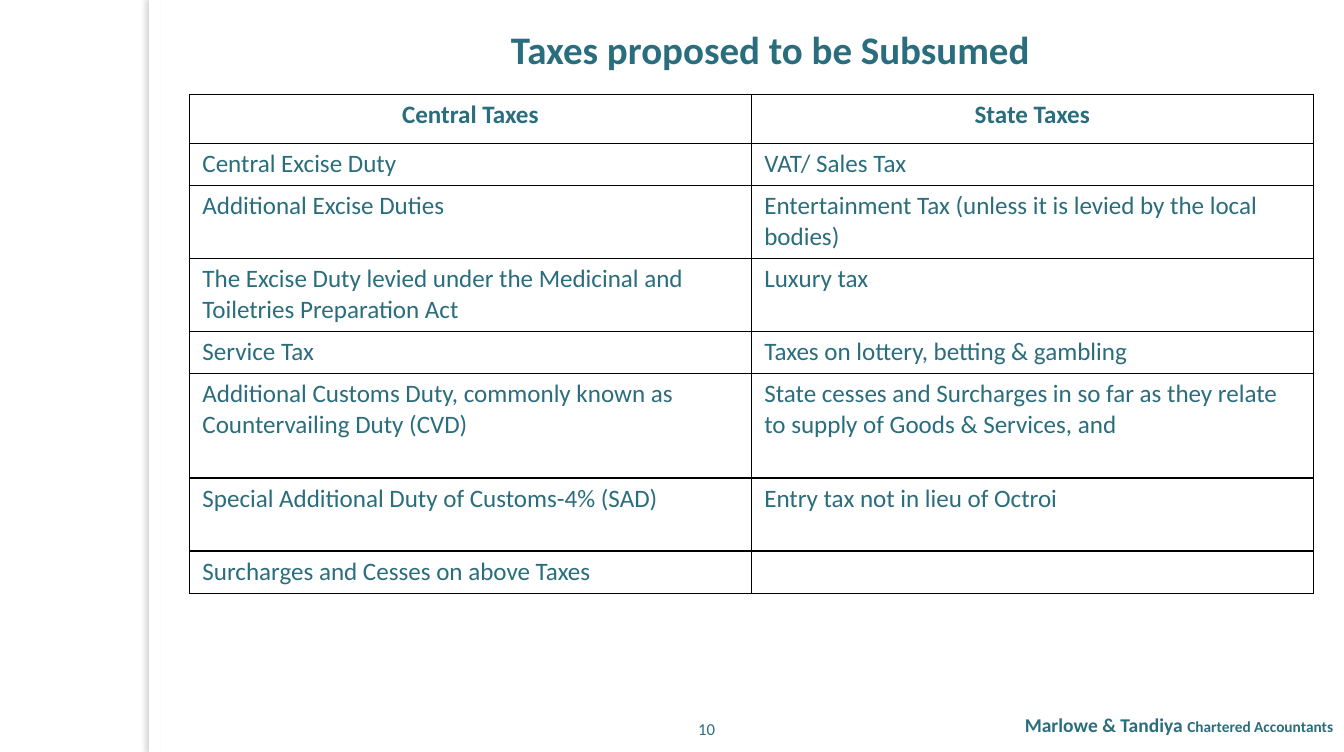
import pptx
import pptx.dml.color
import pptx.enum.shapes
import pptx.enum.text
import pptx.oxml
import pptx.oxml.ns
import pptx.util
from pptx.util import Cm

COLORS = {"teal": "2A6D7D", "white": "FFFFFF", "border": "000000", "shadow": "736F63"}
FONT = "Calibri"
ALIGN = pptx.enum.text.PP_ALIGN
NAMESPACE = pptx.oxml.ns.nsdecls("a")

TAXES = [
    ("Central Taxes", "State Taxes"),
    ("Central Excise Duty", "VAT/ Sales Tax"),
    ("Additional Excise Duties",
     "Entertainment Tax (unless it is levied by the local bodies)"),
    ("The Excise Duty levied under the Medicinal and Toiletries Preparation Act",
     "Luxury tax"),
    ("Service Tax", "Taxes on lottery, betting & gambling"),
    ("Additional Customs Duty, commonly known as Countervailing Duty (CVD)",
     "State cesses and Surcharges in so far as they relate to supply of Goods & Services, and"),
    ("Special Additional Duty of Customs-4% (SAD)", "Entry tax not in lieu of Octroi"),
    ("Surcharges and Cesses on above Taxes", ""),
]
ROW_HEIGHTS = [1.24, 1.07, 1.85, 1.85, 1.07, 2.64, 1.85, 1.07]


def color(name):
    """Return the named colour."""
    return pptx.dml.color.RGBColor.from_string(COLORS[name])


def add_span(para, text, size=18, bold=False):
    """Append formatted text to a paragraph."""
    span = para.add_run()
    span.text = text
    span.font.name = FONT
    span.font.size = pptx.util.Pt(size)
    span.font.bold = bold
    span.font.color.rgb = color("teal")


def add_text(page, spans, left, top, width, height, align=ALIGN.CENTER, margin=0):
    """Add a wrapped text box made of (text, size, bold) spans."""
    box = page.shapes.add_textbox(Cm(left), Cm(top), Cm(width), Cm(height))
    box.text_frame.word_wrap = True
    para = box.text_frame.paragraphs[0]
    para.alignment = align
    if margin:
        para._p.get_or_add_pPr().set("marL", str(Cm(margin)))
    for text, size, bold in spans:
        add_span(para, text, size=size, bold=bold)


def add_side_strip(page):
    """Add the white vertical strip that casts a shadow to the left."""
    strip = page.shapes.add_shape(
        pptx.enum.shapes.MSO_SHAPE.RECTANGLE, Cm(3.78), 0, Cm(0.28), Cm(19.05))
    strip.fill.solid()
    strip.fill.fore_color.rgb = color("white")
    strip.line.fill.background()
    strip._element.spPr.append(pptx.oxml.parse_xml(
        f'<a:effectLst {NAMESPACE}><a:outerShdw blurRad="38100" dist="38100" dir="10800000">'
        f'<a:srgbClr val="{COLORS["shadow"]}"><a:alpha val="25000"/></a:srgbClr>'
        '</a:outerShdw></a:effectLst>'))


def format_cell(cell, text, header):
    """Fill one table cell with text, borders and margins."""
    for side in "LRTB":
        cell._tc.get_or_add_tcPr().append(pptx.oxml.parse_xml(
            f'<a:ln{side} {NAMESPACE} w="12700"><a:solidFill>'
            f'<a:srgbClr val="{COLORS["border"]}"/></a:solidFill></a:ln{side}>'))
    cell.fill.solid()
    cell.fill.fore_color.rgb = color("white")
    cell.margin_left = cell.margin_right = Cm(0.33)
    cell.margin_top = cell.margin_bottom = Cm(0.13)
    para = cell.text_frame.paragraphs[0]
    para.alignment = ALIGN.CENTER if header else ALIGN.LEFT
    if text:
        add_span(para, text, bold=header)


def add_tax_table(page):
    """Add the table of central and state taxes."""
    table = page.shapes.add_table(
        len(TAXES), 2, Cm(4.8), Cm(2.39), Cm(28.48), Cm(sum(ROW_HEIGHTS))).table
    table.first_row = table.horz_banding = False
    for index, (taxes, height) in enumerate(zip(TAXES, ROW_HEIGHTS)):
        table.rows[index].height = Cm(height)
        for column, text in enumerate(taxes):
            format_cell(table.cell(index, column), text, header=index == 0)


def main():
    """Build the slide and save it."""
    deck = pptx.Presentation()
    deck.slide_width, deck.slide_height = Cm(34.06), Cm(19.05)
    page = deck.slides.add_slide(deck.slide_layouts[6])
    add_side_strip(page)
    add_text(page, [("Taxes proposed to be Subsumed", 28, True)],
             4.52, 0.53, 28.73, 1.45, margin=1.27)
    add_tax_table(page)
    add_text(page, [("Marlowe & Tandiya ", 14, True), ("Chartered Accountants", 11, True)],
             17.02, 17.93, 17.02, 1.37, align=ALIGN.RIGHT)
    add_text(page, [("10", 12, False)], 17.02, 18.08, 1.78, 0.76)
    deck.save("out.pptx")


if __name__ == "__main__":
    main()
